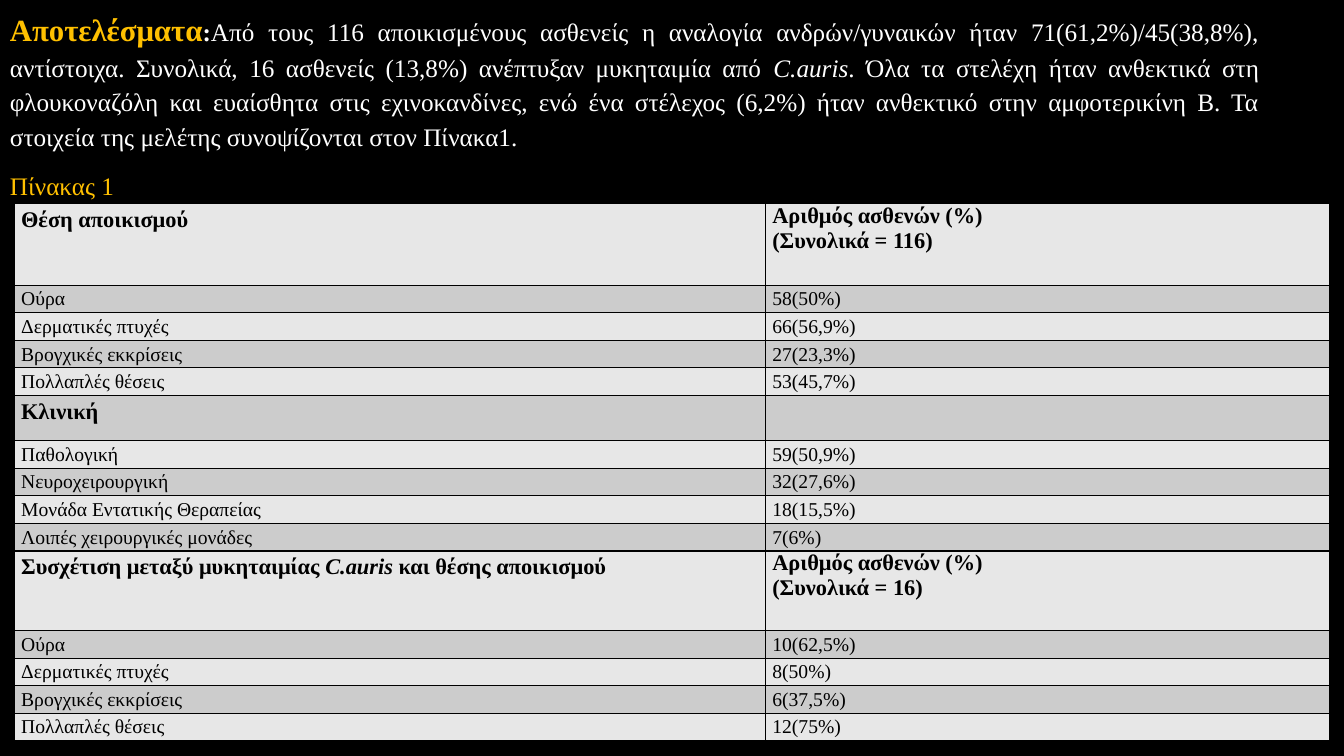
"""Build the slide with the study results and the table of colonised patients."""
from lxml import etree
from pptx import Presentation
from pptx.dml.color import RGBColor
from pptx.enum.text import PP_ALIGN
from pptx.oxml.ns import qn
from pptx.util import Inches, Pt

JUSTIFY = PP_ALIGN.JUSTIFY
BLACK = RGBColor(0x00, 0x00, 0x00)
WHITE = RGBColor(0xFF, 0xFF, 0xFF)
GOLD = RGBColor(0xFF, 0xC0, 0x00)
LIGHT_GRAY = RGBColor(0xE7, 0xE7, 0xE7)
MID_GRAY = RGBColor(0xCC, 0xCC, 0xCC)

TABLE_HEIGHT = 5.33
HEADING_HEIGHTS = {0: 0.81, 5: 0.45, 10: 0.79}
TABLE_ROWS = [
    (["Θέση αποικισμού"], ["Αριθμός ασθενών (%)", "(Συνολικά = 116)"]),
    (["Ούρα"], ["58(50%)"]),
    (["Δερματικές πτυχές"], ["66(56,9%)"]),
    (["Βρογχικές εκκρίσεις"], ["27(23,3%)"]),
    (["Πολλαπλές θέσεις"], ["53(45,7%)"]),
    (["Κλινική"], []),
    (["Παθολογική"], ["59(50,9%)"]),
    (["Νευροχειρουργική"], ["32(27,6%)"]),
    (["Μονάδα Εντατικής Θεραπείας"], ["18(15,5%)"]),
    (["Λοιπές χειρουργικές μονάδες"], ["7(6%)"]),
    (["Συσχέτιση μεταξύ μυκηταιμίας *C.auris *και θέσης αποικισμού"],
     ["Αριθμός ασθενών (%)", "(Συνολικά = 16)"]),
    (["Ούρα"], ["10(62,5%)"]),
    (["Δερματικές πτυχές"], ["8(50%)"]),
    (["Βρογχικές εκκρίσεις"], ["6(37,5%)"]),
    (["Πολλαπλές θέσεις"], ["12(75%)"]),
]
RESULTS = (
    "Από τους 116 αποικισμένους ασθενείς η αναλογία ανδρών/γυναικών ήταν "
    "71(61,2%)/45(38,8%), αντίστοιχα. Συνολικά, 16 ασθενείς (13,8%) ανέπτυξαν "
    "μυκηταιμία από *C.auris*. Όλα τα στελέχη ήταν ανθεκτικά στη φλουκοναζόλη και "
    "ευαίσθητα στις εχινοκανδίνες, ενώ ένα στέλεχος (6,2%) ήταν ανθεκτικό στην "
    "αμφοτερικίνη Β. Τα στοιχεία της μελέτης συνοψίζονται στον Πίνακα1."
)


def add_text(paragraph, text, size=18, color=WHITE, bold=False, font="Times New Roman"):
    """Add text to a paragraph, with the parts between asterisks in italics."""
    for index, part in enumerate(text.split("*")):
        run = paragraph.add_run()
        run.text = part
        run.font.name = font
        run.font.size = Pt(size)
        run.font.bold = bold
        run.font.italic = index % 2 == 1
        run.font.color.rgb = color


class SlideBuilder:
    """Hold the shared style and the current slide."""

    line_spacing = 1.15
    space_after = Pt(10)
    cell_margin = Inches(0.07)
    border_width = Pt(1)

    def __init__(self, presentation, background):
        """Add a blank slide with a plain background."""
        self.slide = presentation.slides.add_slide(presentation.slide_layouts[6])
        self.slide.background.fill.solid()
        self.slide.background.fill.fore_color.rgb = background

    def text_box(self, left, top, width, height, paragraphs):
        """Add a justified text box; each paragraph is a list of text and format."""
        box = self.slide.shapes.add_textbox(
            Inches(left), Inches(top), Inches(width), Inches(height))
        frame = box.text_frame
        frame.word_wrap = True
        for index, runs in enumerate(paragraphs):
            paragraph = frame.add_paragraph() if index else frame.paragraphs[0]
            paragraph.alignment = JUSTIFY
            paragraph.line_spacing = self.line_spacing
            paragraph.space_after = self.space_after
            for text, text_format in runs:
                add_text(paragraph, text, **text_format)

    def border(self, cell):
        """Draw a black line on the four sides of a cell."""
        properties = cell._tc.get_or_add_tcPr()
        for side in ("a:lnL", "a:lnR", "a:lnT", "a:lnB"):
            line = etree.SubElement(properties, qn(side), w=str(self.border_width))
            fill = etree.SubElement(line, qn("a:solidFill"))
            etree.SubElement(fill, qn("a:srgbClr"), val=str(BLACK))

    def cell(self, cell, lines, fill, size, bold):
        """Fill a table cell with lines of text."""
        cell.margin_left = cell.margin_right = self.cell_margin
        cell.margin_top = cell.margin_bottom = 0
        self.border(cell)
        cell.fill.solid()
        cell.fill.fore_color.rgb = fill
        frame = cell.text_frame
        for index, line in enumerate(lines):
            paragraph = frame.add_paragraph() if index else frame.paragraphs[0]
            paragraph.alignment = JUSTIFY
            paragraph.line_spacing = self.line_spacing if len(lines) == 1 else 1.0
            add_text(paragraph, line, size=size, bold=bold, color=BLACK)

    def table(self, left, top, column_widths, height, rows, heading_heights):
        """Add a table with alternating row fills and bold heading rows."""
        frame = self.slide.shapes.add_table(
            len(rows), len(column_widths), Inches(left), Inches(top),
            Inches(sum(column_widths)), Inches(height))
        table = frame.table
        table.first_row = table.horz_banding = False
        for column, width in zip(table.columns, column_widths):
            column.width = Inches(width)
        plain_rows = len(rows) - len(heading_heights)
        plain_height = (height - sum(heading_heights.values())) / plain_rows
        for row_index, row in enumerate(rows):
            heading = row_index in heading_heights
            table.rows[row_index].height = Inches(
                heading_heights.get(row_index, plain_height))
            fill = MID_GRAY if row_index % 2 else LIGHT_GRAY
            for column_index, lines in enumerate(row):
                self.cell(table.cell(row_index, column_index), lines, fill,
                          16 if heading else 14, heading)


def main():
    """Build and save the presentation."""
    presentation = Presentation()
    presentation.slide_width = Inches(13.33)
    presentation.slide_height = Inches(7.5)
    builder = SlideBuilder(presentation, BLACK)
    builder.text_box(0, 0, 12.59, 3.13, [
        [("Αποτελέσματα", {"size": 22, "color": GOLD, "bold": True}),
         (":", {"bold": True}),
         (RESULTS, {})],
        [("Πίνακας 1", {"color": GOLD})],
    ])
    builder.table(0.14, 2.02, [7.45, 5.6], TABLE_HEIGHT, TABLE_ROWS, HEADING_HEIGHTS)
    presentation.save("out.pptx")


if __name__ == "__main__":
    main()
